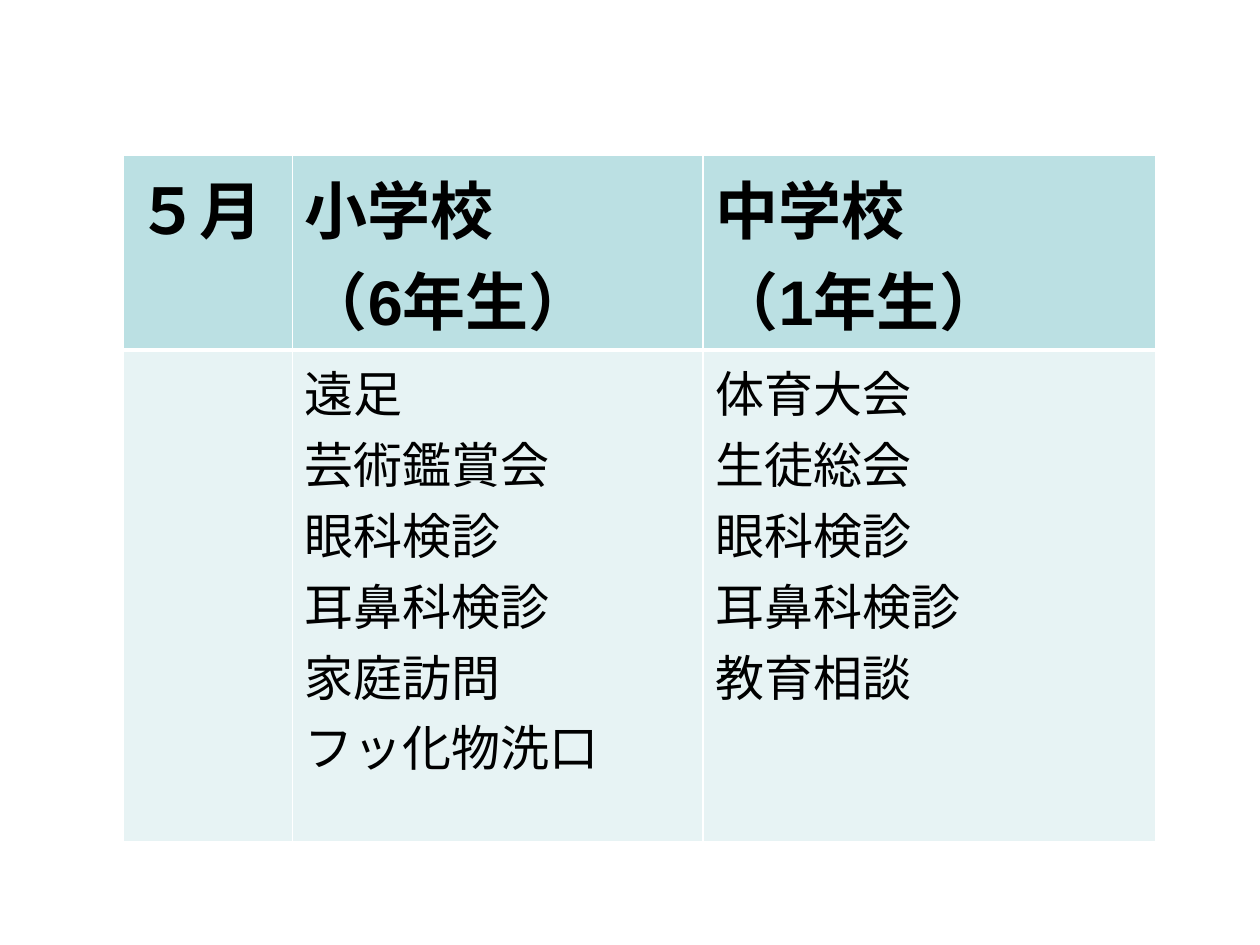
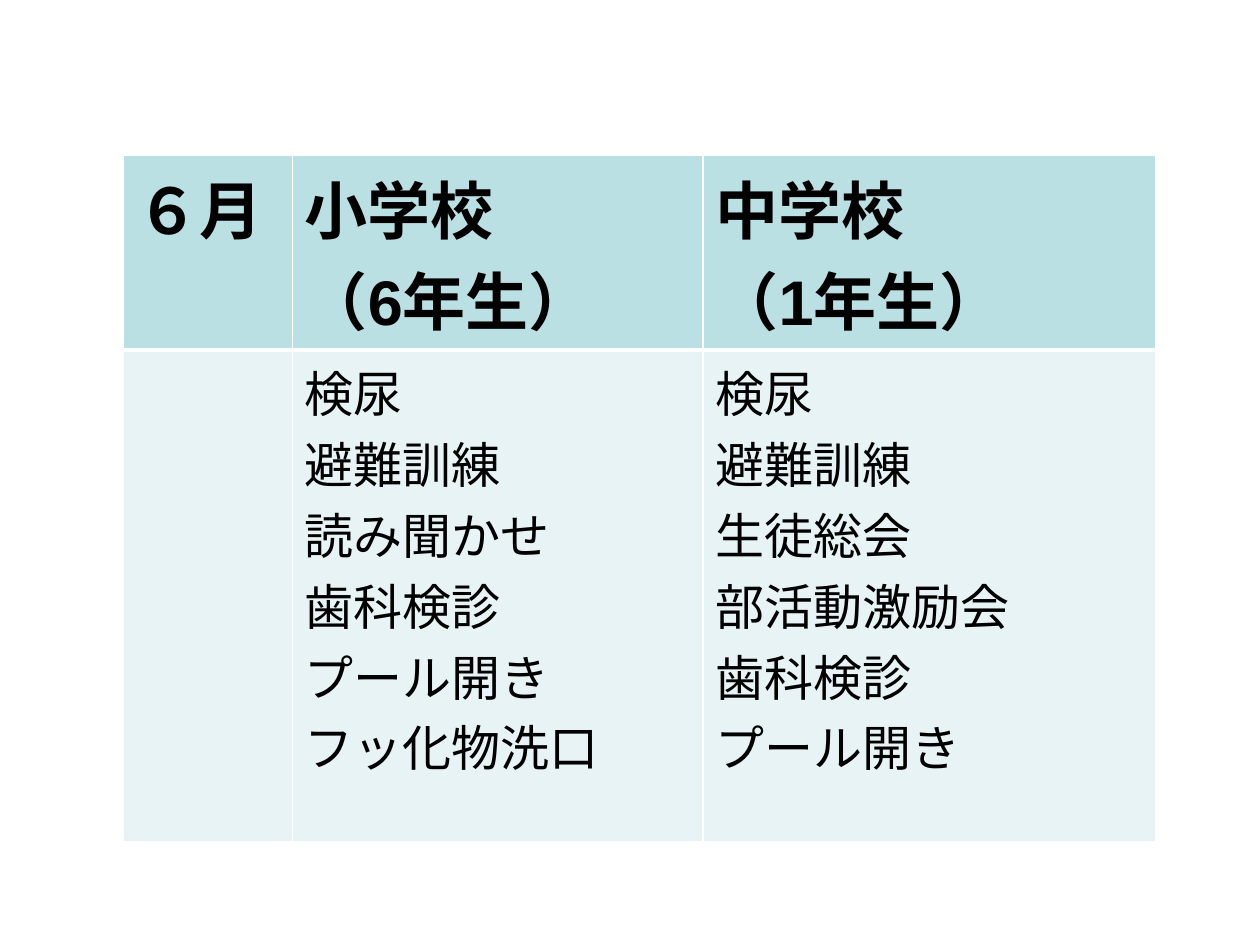
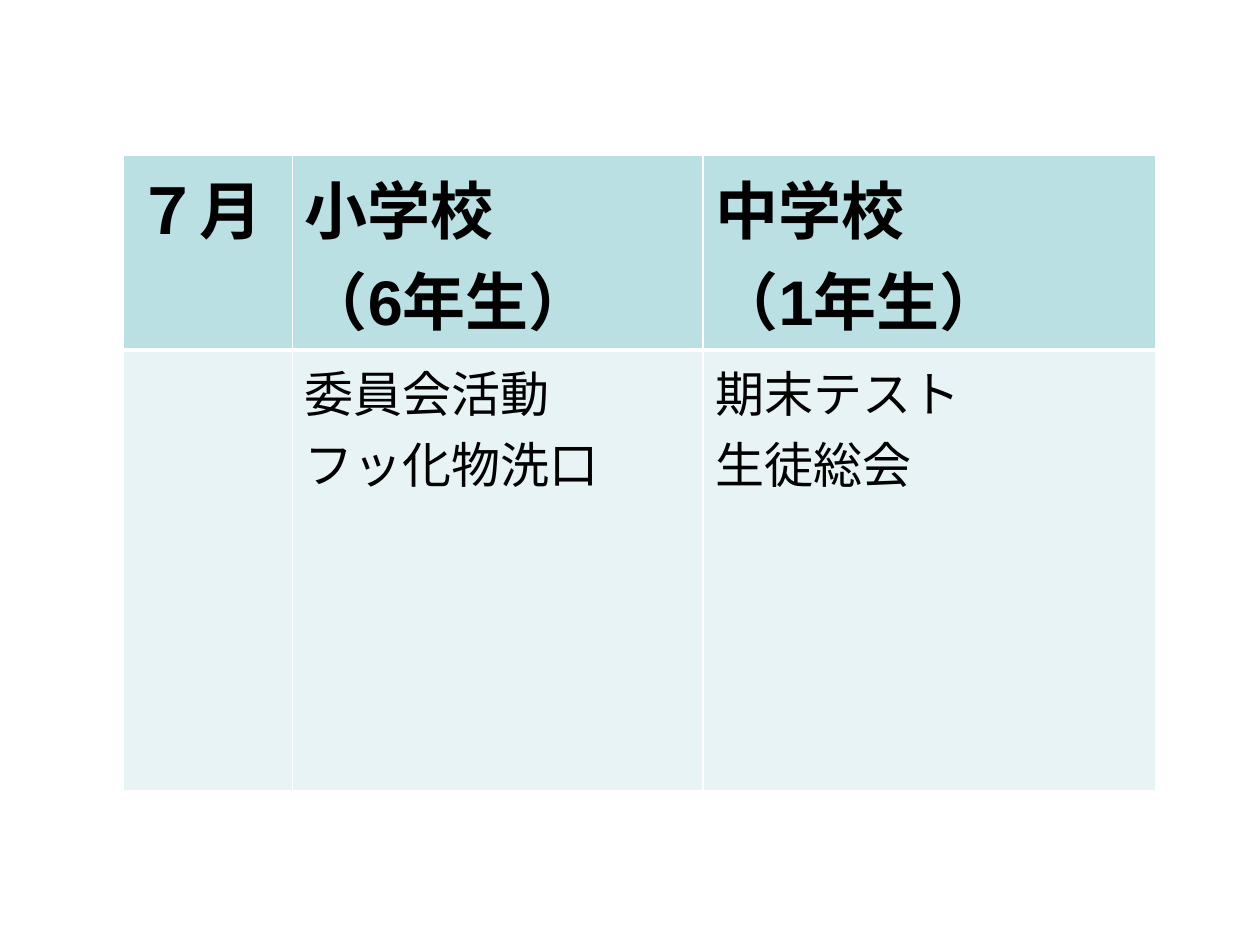
from dataclasses import dataclass

from lxml.etree import SubElement
from pptx import Presentation
from pptx.dml.color import RGBColor
from pptx.enum.lang import MSO_LANGUAGE_ID as Language
from pptx.oxml.ns import qn
from pptx.util import Inches, Pt


@dataclass(frozen=True)
class Theme:
    font: str = "Arial"
    text: str = "000000"
    border: str = "FFFFFF"
    header_fill: str = "BBE0E3"
    body_fill: str = "E7F3F4"
    header_size: int = 36
    body_size: int = 28
    thin: int = 1
    thick: int = 3


SLIDE_WIDTH, SLIDE_HEIGHT = Inches(10), Inches(7.5)
TABLE_LEFT, TABLE_TOP = 0.098, 0.164
COLUMN_SHARES = (0.134, 0.326, 0.359)
HEADER_HEIGHT = 0.204
FULL_BODY, SHORT_BODY = 0.52, 0.467
SCHOOLS = (("小学校", "（6年生）"), ("中学校", "（1年生）"))

MONTHS = (
    (
        "５月",
        FULL_BODY,
        ("遠足", "芸術鑑賞会", "眼科検診", "耳鼻科検診", "家庭訪問", "フッ化物洗口"),
        ("体育大会", "生徒総会", "眼科検診", "耳鼻科検診", "教育相談"),
    ),
    (
        "６月",
        FULL_BODY,
        ("検尿", "避難訓練", "読み聞かせ", "歯科検診", "プール開き", "フッ化物洗口"),
        ("検尿", "避難訓練", "生徒総会", "部活動激励会", "歯科検診", "プール開き"),
    ),
    (
        "７月",
        SHORT_BODY,
        ("委員会活動", "フッ化物洗口"),
        ("期末テスト", "生徒総会"),
    ),
)


class Calendar:
    def __init__(self, theme):
        self.theme = theme
        self.deck = Presentation()
        self.deck.slide_width = SLIDE_WIDTH
        self.deck.slide_height = SLIDE_HEIGHT
        self.page = None

    def across(self, share):
        return round(SLIDE_WIDTH * share)

    def down(self, share):
        return round(SLIDE_HEIGHT * share)

    def add_page(self):
        self.page = self.deck.slides.add_slide(self.deck.slide_layouts[6])

    def add_events(self, header, body, body_height):
        heights = (HEADER_HEIGHT, body_height)
        table = self.page.shapes.add_table(
            len(heights),
            len(COLUMN_SHARES),
            self.across(TABLE_LEFT),
            self.down(TABLE_TOP),
            self.across(sum(COLUMN_SHARES)),
            self.down(sum(heights)),
        ).table
        table.first_row = table.horz_banding = False
        for column, share in zip(table.columns, COLUMN_SHARES):
            column.width = self.across(share)
        for row, share in zip(table.rows, heights):
            row.height = self.down(share)
        for column, lines in enumerate(header):
            self.fill_cell(table.cell(0, column), lines, True)
        for column, lines in enumerate(body):
            self.fill_cell(table.cell(1, column), lines, False)

    def fill_cell(self, cell, lines, is_header):
        theme = self.theme
        top, bottom = (theme.thin, theme.thick) if is_header else (theme.thick, theme.thin)
        self.add_borders(cell, {"lnL": theme.thin, "lnR": theme.thin, "lnT": top, "lnB": bottom})
        cell.fill.solid()
        cell.fill.fore_color.rgb = RGBColor.from_string(
            theme.header_fill if is_header else theme.body_fill
        )
        cell.text = "\n".join(lines)
        for para in cell.text_frame.paragraphs:
            font = para.font
            font.name = theme.font
            font.size = Pt(theme.header_size if is_header else theme.body_size)
            font.bold = is_header
            font.color.rgb = RGBColor.from_string(theme.text)
            font.language_id = Language.JAPANESE

    def add_borders(self, cell, widths):
        properties = cell._tc.get_or_add_tcPr()
        for side, width in widths.items():
            line = SubElement(properties, qn(f"a:{side}"), w=str(Pt(width)))
            fill = SubElement(line, qn("a:solidFill"))
            SubElement(fill, qn("a:srgbClr"), val=self.theme.border)


def main():
    calendar = Calendar(Theme())
    for month, body_height, primary, junior_high in MONTHS:
        calendar.add_page()
        calendar.add_events(((month,), *SCHOOLS), ((), primary, junior_high), body_height)
    calendar.deck.save("out.pptx")


if __name__ == "__main__":
    main()
